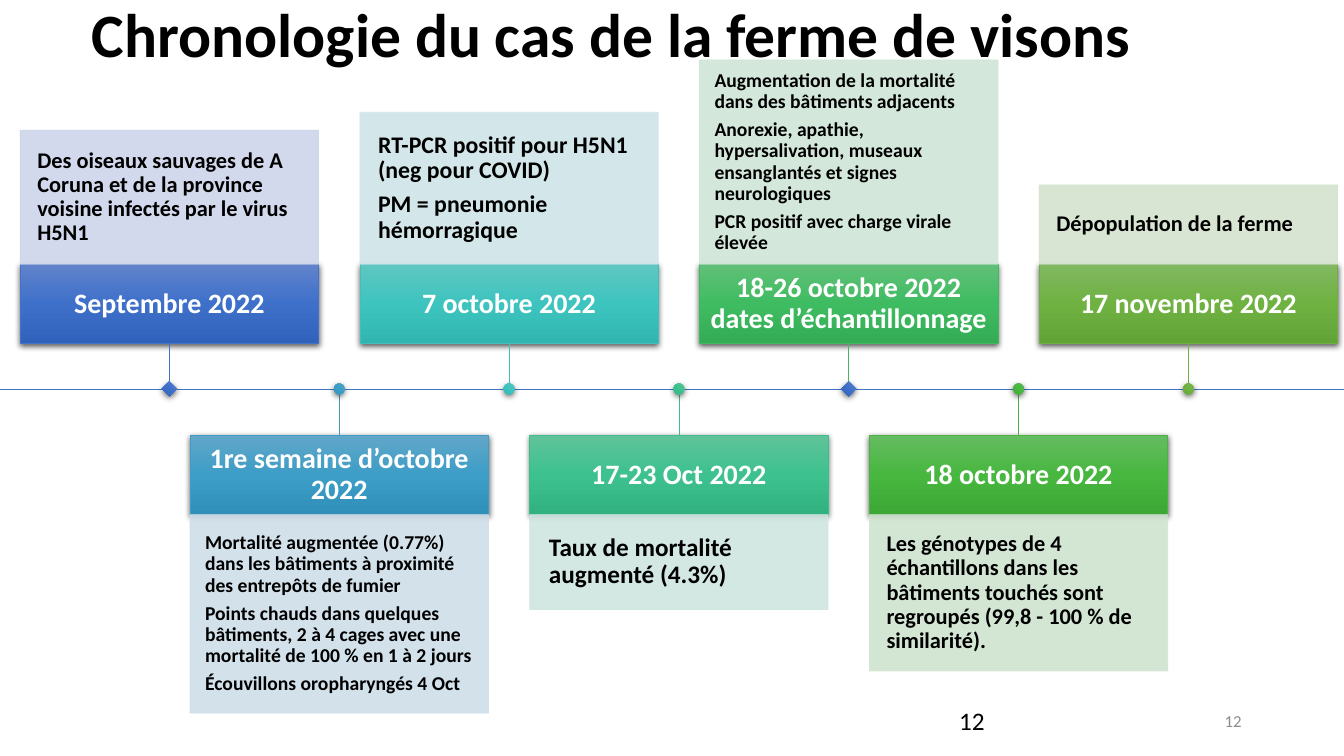
"""Timeline slide of the mink farm case, with events alternating above and below an axis."""
from copy import deepcopy
from dataclasses import dataclass

from lxml import etree
from pptx import Presentation
from pptx import util as u
from pptx.dml.color import RGBColor
from pptx.enum import shapes, text
from pptx.oxml.ns import qn

HEADING = "Chronologie du cas de la ferme de visons"
PAGE = "12"

# date, details, detail type size, detail height in cm, milestone
EVENTS = [
    ("Septembre 2022",
     ["Des oiseaux sauvages de A Coruna et de la province voisine infectés par le virus H5N1"],
     16, 3.38, True),
    ("1re semaine d’octobre 2022",
     ["Mortalité augmentée (0.77%) dans les bâtiments à proximité des entrepôts de fumier",
      "Points chauds dans quelques bâtiments, 2 à 4 cages avec une mortalité de 100 % en 1 à 2 jours",
      "Écouvillons oropharyngés 4 Oct"],
     14, 5.0, False),
    ("7 octobre 2022",
     ["RT-PCR positif pour H5N1 (neg pour COVID)", "PM = pneumonie hémorragique"],
     17, 3.83, False),
    ("17-23 Oct 2022", ["Taux de mortalité augmenté (4.3%)"], 18, 2.39, False),
    ("18-26 octobre 2022 dates d’échantillonnage",
     ["Augmentation de la mortalité dans des bâtiments adjacents",
      "Anorexie, apathie, hypersalivation, museaux ensanglantés et signes neurologiques",
      "PCR positif avec charge virale élevée"],
     14, 5.15, True),
    ("18 octobre 2022",
     ["Les génotypes de 4 échantillons dans les bâtiments touchés sont regroupés "
      "(99,8 - 100 % de similarité)."],
     16, 3.94, False),
    ("17 novembre 2022", ["Dépopulation de la ferme"], 16, 2.0, False),
]


@dataclass(frozen=True)
class Theme:
    """Colours, font and type sizes of the slide."""
    font: str = "Calibri"
    title: int = 44
    date: int = 20
    page: int = 18
    footer: int = 12
    ink: str = "000000"
    light: str = "FFFFFF"
    grey: str = "8C8C8C"
    hairline: float = 0.5
    gradients: tuple = (
        ("6183CB", "3E70CA", "3062BB"), ("61A6C8", "3D9EC7", "308FB8"),
        ("60C6C1", "3DC4BF", "30B5B0"), ("60C39A", "3DC18F", "31B080"),
        ("60C077", "3FBC62", "33AC55"), ("65BC61", "48B740", "3CA735"),
        ("81B861", "6FB242", "62A336"))
    accents: tuple = ("4472C4", "449BC1", "43BEB9", "43BB8D", "45B664", "4CB146", "70AD47")
    tints: tuple = ("CFD5EA", "CFDEE9", "CFE5E8", "CFE6E0", "CFE5D8", "CFE4D0", "D5E3CF")


THEME = Theme()
SLIDE_W, SLIDE_H = 33.87, 19.05
LEFT, PITCH, CARD_W, DATE_H = 0.51, 4.28, 7.52, 2.0
AXIS_Y, UPPER_Y, LOWER_Y, MARKER = 9.8, 6.66, 10.97, 0.27


def write(frame, lines, size, colour, bold=True, align=text.PP_ALIGN.LEFT,
          anchor=text.MSO_ANCHOR.MIDDLE, inset=None, spacing=0.9):
    """Fill a text frame and format its paragraphs."""
    frame.text = "\n".join(lines)
    frame.word_wrap = True
    frame.auto_size = text.MSO_AUTO_SIZE.NONE
    frame.vertical_anchor = anchor
    if inset is not None:
        frame.margin_left = frame.margin_right = u.Cm(inset)
        frame.margin_top = frame.margin_bottom = u.Cm(inset)
    for paragraph in frame.paragraphs:
        paragraph.alignment = align
        paragraph.line_spacing = spacing
        if len(lines) > 1:
            paragraph.space_after = u.Pt(round(0.35 * size, 1))
        for run in paragraph.runs:
            run.font.name, run.font.size, run.font.bold = THEME.font, u.Pt(size), bold
            run.font.color.rgb = RGBColor.from_string(colour)


def add_block(slide, kind, x, y, w, h):
    """Add a preset shape without a shadow."""
    block = slide.shapes.add_shape(kind, u.Cm(x), u.Cm(y), u.Cm(w), u.Cm(h))
    block.shadow.inherit = False
    return block


def outline(line, colour):
    """Give a line its colour and hairline width."""
    line.color.rgb = RGBColor.from_string(colour)
    line.width = u.Pt(THEME.hairline)


def raise_block(block, colours):
    """Apply a vertical three-stop gradient and a soft shadow below."""
    block.fill.gradient()
    block.fill.gradient_angle = 270
    properties = block._element.spPr
    stops = properties.find(qn("a:gradFill")).find(qn("a:gsLst"))
    stops.append(deepcopy(stops[0]))
    for stop, colour, position in zip(block.fill.gradient_stops, colours, (0, 0.5, 1)):
        stop.color.rgb = RGBColor.from_string(colour)
        stop.position = position
    shadow = etree.SubElement(properties.find(qn("a:effectLst")), qn("a:outerShdw"),
                              blurRad=str(u.Pt(4.5)), dist=str(u.Pt(1.5)),
                              dir="5400000", algn="ctr", rotWithShape="0")
    tone = etree.SubElement(shadow, qn("a:srgbClr"), val=THEME.ink)
    etree.SubElement(tone, qn("a:alpha"), val="63000")


def add_line(slide, x1, y1, x2, y2, colour):
    """Add a thin straight connector."""
    line = slide.shapes.add_connector(shapes.MSO_CONNECTOR.STRAIGHT,
                                      u.Cm(x1), u.Cm(y1), u.Cm(x2), u.Cm(y2))
    outline(line.line, colour)
    etree.SubElement(line._element.spPr, qn("a:effectLst"))
    return line


def add_event(slide, index, event):
    """Draw one event: date, details, stem and marker."""
    date, details, size, height, milestone = event
    above = index % 2 == 0
    x = LEFT + index * PITCH
    y = UPPER_Y if above else LOWER_Y
    middle = x + CARD_W / 2
    rectangle = shapes.MSO_SHAPE.RECTANGLE

    date_card = add_block(slide, rectangle, x, y, CARD_W, DATE_H)
    raise_block(date_card, THEME.gradients[index])
    outline(date_card.line, THEME.accents[index])
    write(date_card.text_frame, [date], THEME.date, THEME.light,
          align=text.PP_ALIGN.CENTER, inset=0.28)

    detail_y = y - height if above else y + DATE_H
    detail_card = add_block(slide, rectangle, x, detail_y, CARD_W, height)
    detail_card.fill.solid()
    detail_card.fill.fore_color.rgb = RGBColor.from_string(THEME.tints[index])
    outline(detail_card.line, THEME.tints[index])
    for colour in detail_card._element.spPr.iter(qn("a:srgbClr")):
        etree.SubElement(colour, qn("a:alpha"), val="90000")
    write(detail_card.text_frame, details, size, THEME.ink, inset=0.027 * size)

    edge = y + DATE_H if above else y
    stem = add_line(slide, middle, edge, middle, AXIS_Y, THEME.accents[index])
    stem.begin_connect(date_card, 2 if above else 0)

    marker = add_block(slide, rectangle if milestone else shapes.MSO_SHAPE.OVAL,
                       middle - MARKER / 2, AXIS_Y - MARKER / 2, MARKER, MARKER)
    marker.rotation = 45
    raise_block(marker, THEME.gradients[0 if milestone else index])
    marker.line.fill.background()


def main():
    """Build and save the slide."""
    deck = Presentation()
    deck.slide_width, deck.slide_height = u.Cm(SLIDE_W), u.Cm(SLIDE_H)
    slide = deck.slides.add_slide(deck.slide_layouts[5])

    heading = slide.shapes.title
    heading.left, heading.top = u.Cm(2.06), u.Cm(-0.48)
    heading.width, heading.height = u.Cm(29.49), u.Cm(2.87)
    write(heading.text_frame, [HEADING], THEME.title, THEME.ink)

    for size, colour, align, anchor in (
            (THEME.footer, THEME.grey, text.PP_ALIGN.RIGHT, text.MSO_ANCHOR.MIDDLE),
            (THEME.page, THEME.ink, text.PP_ALIGN.LEFT, text.MSO_ANCHOR.TOP)):
        page = slide.shapes.add_textbox(u.Cm(23.92), u.Cm(17.66), u.Cm(7.62), u.Cm(1.01))
        write(page.text_frame, [PAGE], size, colour, False, align, anchor, spacing=1.0)

    add_line(slide, 0, AXIS_Y, SLIDE_W, AXIS_Y, THEME.accents[0])
    for index, event in enumerate(EVENTS):
        add_event(slide, index, event)
    deck.save("out.pptx")


if __name__ == "__main__":
    main()
